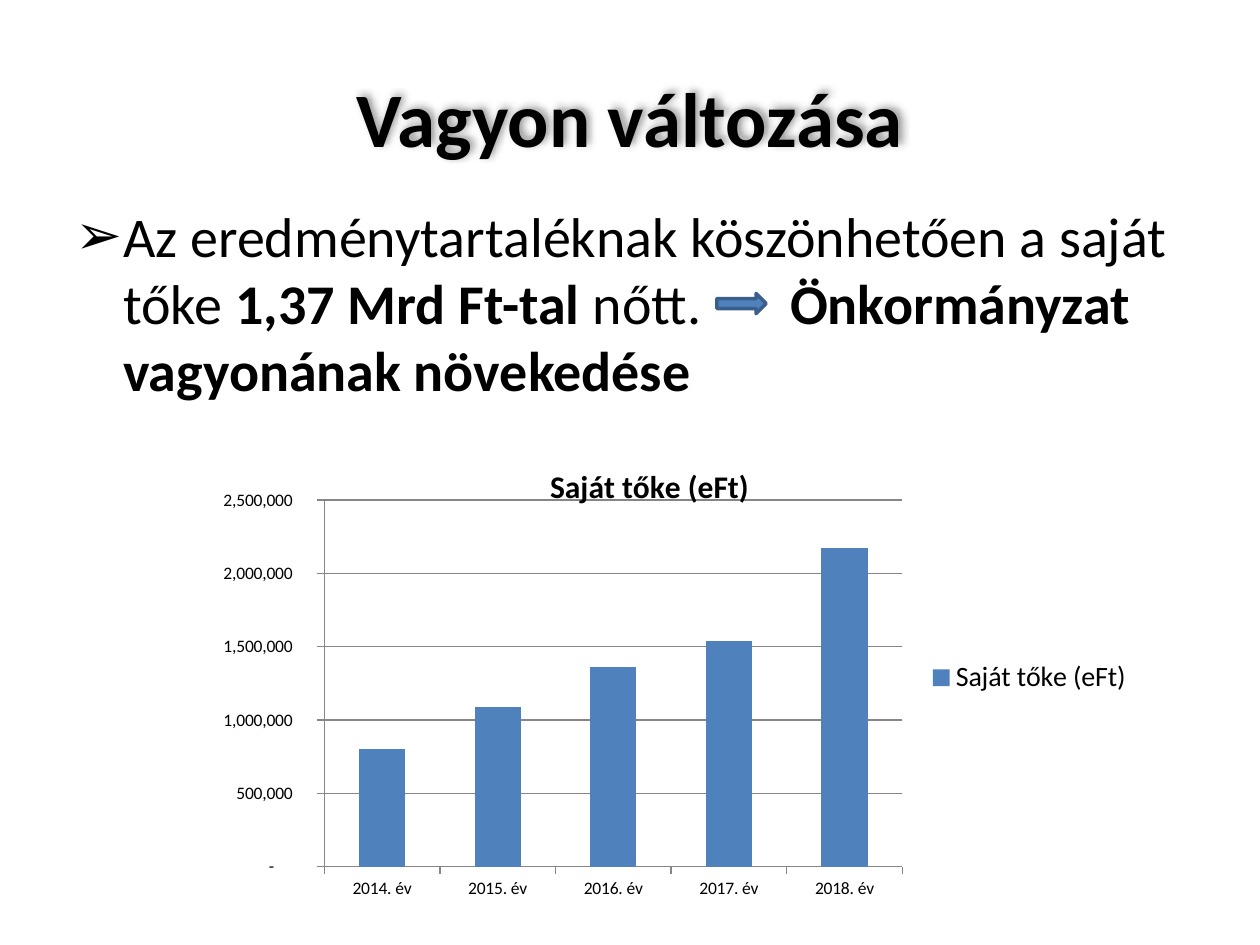
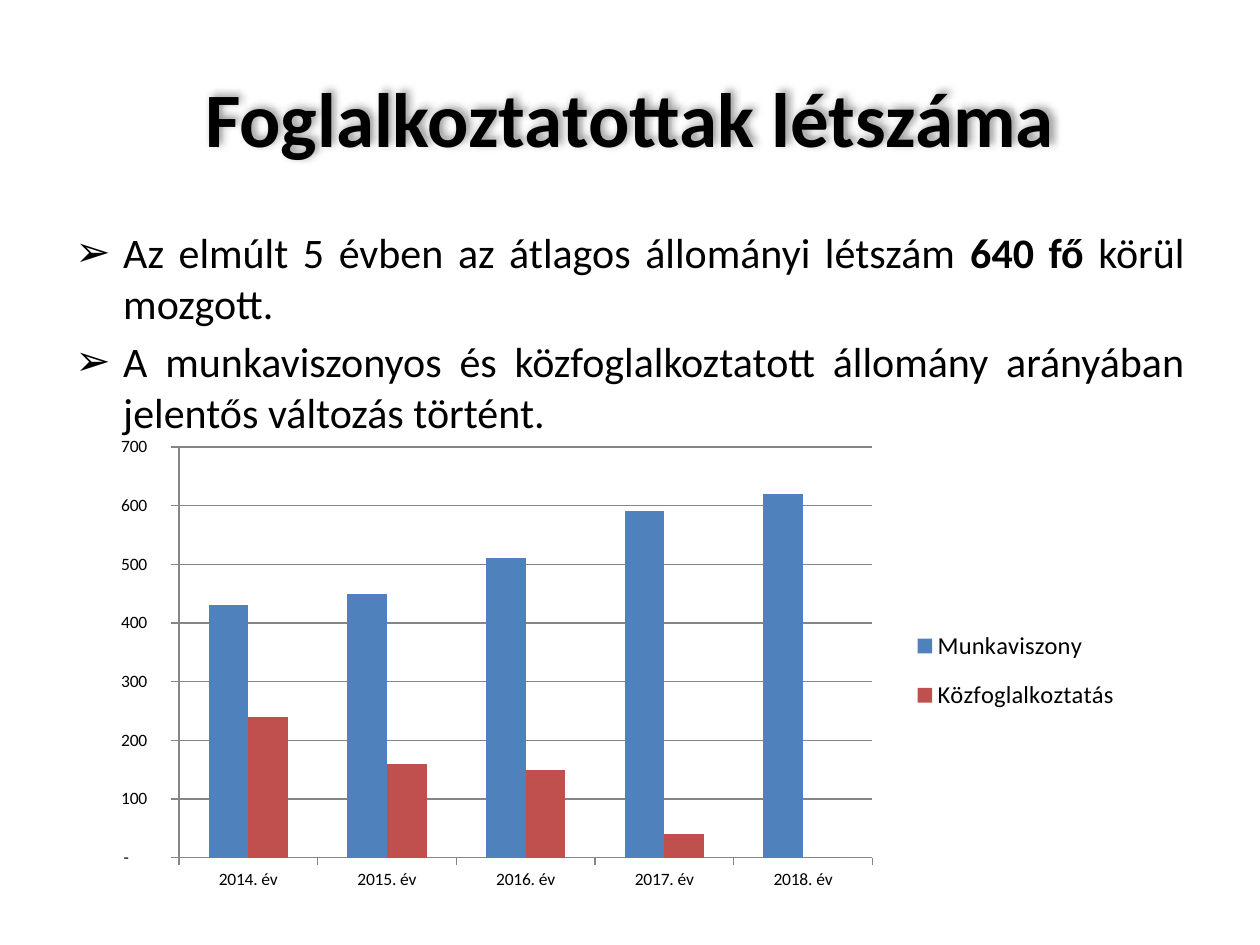
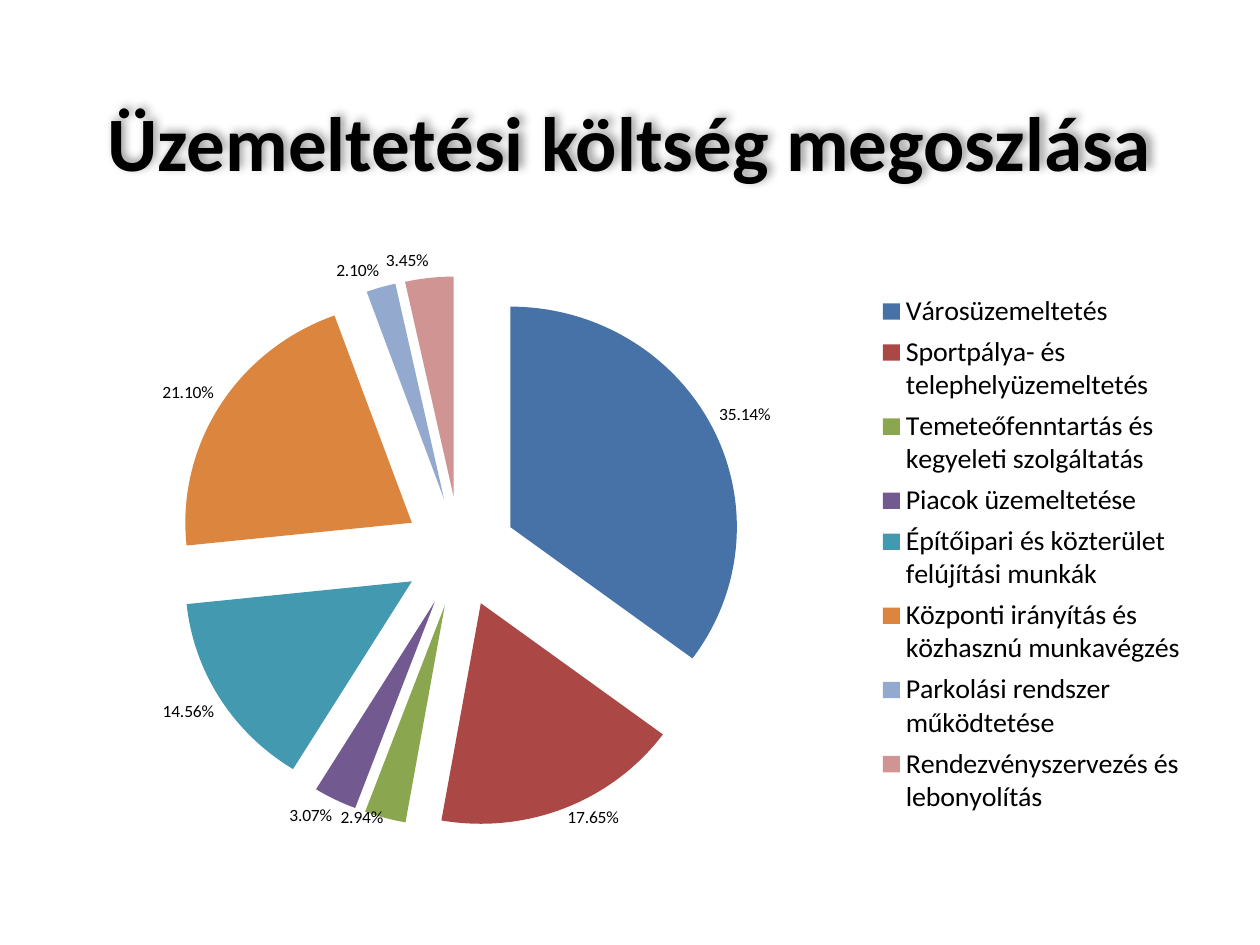
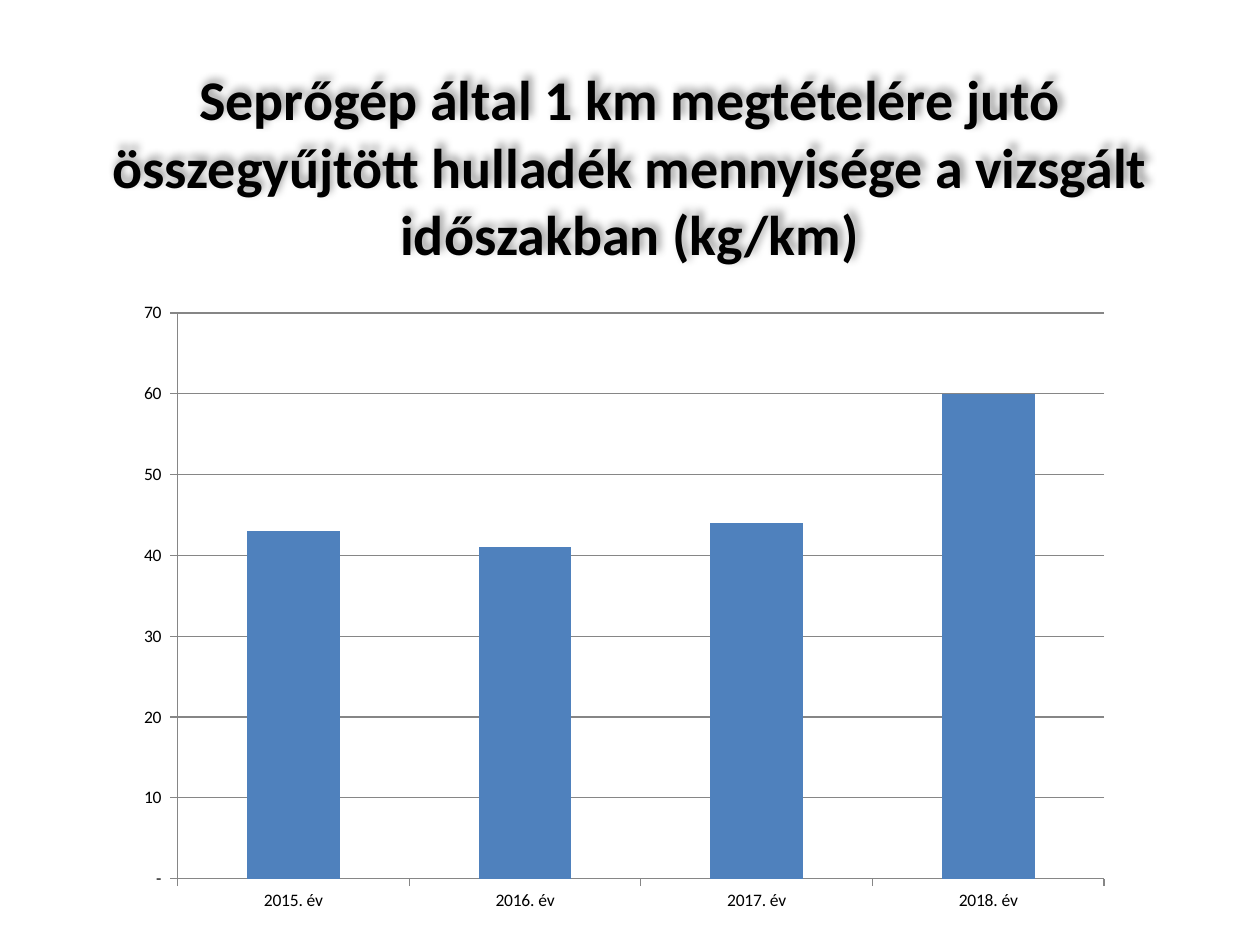
"""Build four slides on town assets, staff, running costs and street sweeping."""
from dataclasses import dataclass
from typing import Optional

from lxml import etree
from pptx import Presentation
from pptx import util as u
from pptx.chart.data import CategoryChartData
from pptx.dml.color import RGBColor
from pptx.enum import chart as kinds, shapes, text
from pptx.oxml import ns

PX = 9144
FONT, BLACK, GREY = "Calibri", "000000", "868686"
BLUE, RED, EDGE = "4F81BD", "C0504D", "3A5F8C"
SLICES = ("4672A8", "AB4744", "8AA64F", "725990", "4299B0", "DC853E", "93A9CE", "D09493")
FORINT = r'_-* #,##0\ _F_t_-;\-* #,##0\ _F_t_-;_-* "-"??\ _F_t_-;_-@_-'
COUNT = r'_(* #,##0_);_(* \(#,##0\);_(* "-"_);_(@_)'
YEARS = [f"{year}. év" for year in range(2014, 2019)]


@dataclass
class Box:
    """A frame in px."""
    left: int
    top: int
    width: int
    height: int

    def emu(self) -> list:
        """Give the frame in EMU."""
        return [u.Emu(n * PX) for n in (self.left, self.top, self.width, self.height)]


@dataclass
class Run:
    """A piece of text; gap widens its letters, in points."""
    words: str
    bold: bool = False
    gap: float = 0


@dataclass
class Graph:
    """What a chart shows and how it is laid out."""
    box: Box
    cats: list
    rows: dict
    plot: tuple
    form: str
    top: float = 0
    step: float = 0
    title: str = ""
    key: int = 0
    place: Optional[tuple] = None


def tint(code: str) -> RGBColor:
    """Turn a hex string into a colour."""
    return RGBColor.from_string(code)


def add(parent, tag: str, **attrs):
    """Append an XML element with the given attributes."""
    return etree.SubElement(parent, ns.qn(tag), {k: str(v) for k, v in attrs.items()})


def style(font, size: float, bold: bool = False) -> None:
    """Give a font the shared face and colour."""
    font.name, font.size, font.bold = FONT, u.Pt(size), bold
    font.color.rgb = tint(BLACK)


def write(slide, box: Box, paras: list, size: float, align=None,
          middle: bool = False, mark: str = ""):
    """Add a text box of paragraphs, each a list of runs."""
    shape = slide.shapes.add_textbox(*box.emu())
    frame = shape.text_frame
    frame.word_wrap = True
    frame.vertical_anchor = text.MSO_ANCHOR.MIDDLE if middle else text.MSO_ANCHOR.TOP
    for i, runs in enumerate(paras):
        para = frame.add_paragraph() if i else frame.paragraphs[0]
        para.alignment = align
        if i:
            para.space_before = u.Pt(size * 0.2)
        if mark:
            props = para._p.get_or_add_pPr()
            props.set("marL", str(38 * PX))
            props.set("indent", str(-38 * PX))
            add(props, "a:buFont", typeface=FONT)
            add(props, "a:buChar", char=mark)
        for part in runs:
            run = para.add_run()
            run.text = part.words
            style(run.font, size, part.bold)
            if part.gap:
                run._r.get_or_add_rPr().set("spc", str(int(part.gap * 100)))
    return shape


def head(slide, words: str, height: int = 125, size: float = 44) -> None:
    """Add the bold title with its soft shadow."""
    shape = write(slide, Box(50, 30, 900, height), [[Run(words, True)]], size,
                  text.PP_ALIGN.CENTER, middle=True)
    glow = add(add(shape._element.spPr, "a:effectLst"), "a:outerShdw", blurRad=63500,
               dist=38100, dir=17400000, algn="bl", rotWithShape=0)
    add(add(glow, "a:prstClr", val="black"), "a:alpha", val=40000)


def place(owner, spots: tuple, inner: bool = False) -> None:
    """Fix a chart part at fractions x, y and maybe w, h of its chart."""
    for old in owner.findall(ns.qn("c:layout")):
        owner.remove(old)
    layout = etree.Element(ns.qn("c:layout"))
    manual = add(layout, "c:manualLayout")
    if inner:
        add(manual, "c:layoutTarget", val="inner")
    for name in ("xMode", "yMode"):
        add(manual, f"c:{name}", val="edge")
    for name, spot in zip("xywh", spots):
        add(manual, f"c:{name}", val=spot)
    prior = [el for el in owner if el.tag in (ns.qn("c:legendPos"), ns.qn("c:tx"))]
    owner.insert(owner.index(prior[-1]) + 1 if prior else 0, layout)


def draw(slide, graph: Graph, kind):
    """Add a chart with the shared font, plot frame, title and legend."""
    data = CategoryChartData()
    data.categories = graph.cats
    for name, vals in graph.rows.items():
        data.add_series(name, vals)
    chart = slide.shapes.add_chart(kind, *graph.box.emu(), data).chart
    style(chart.font, 10)
    chart.has_title = bool(graph.title)
    if graph.title:
        frame = chart.chart_title.text_frame
        frame.text = graph.title
        style(frame.paragraphs[0].runs[0].font, 18, True)
        place(chart.chart_title._element, (0.394, 0.035))
    chart.has_legend = bool(graph.key)
    if graph.key:
        chart.legend.position = kinds.XL_LEGEND_POSITION.RIGHT
        chart.legend.include_in_layout = False
        style(chart.legend.font, graph.key)
        if graph.place:
            place(chart.legend._element, graph.place)
    place(chart._chartSpace.chart.plotArea, graph.plot, inner=True)
    return chart


def bars(slide, graph: Graph) -> None:
    """Add a column chart with grey axes and grid."""
    chart = draw(slide, graph, kinds.XL_CHART_TYPE.COLUMN_CLUSTERED)
    plot, scale = chart.plots[0], chart.value_axis
    plot.gap_width, plot.overlap, plot.vary_by_categories = 150, 0, False
    for row, code in zip(plot.series, (BLUE, RED)):
        row.format.fill.solid()
        row.format.fill.fore_color.rgb = tint(code)
    scale.minimum_scale, scale.maximum_scale, scale.major_unit = 0, graph.top, graph.step
    scale.tick_labels.number_format = graph.form
    scale.tick_labels.number_format_is_linked = False
    scale.has_major_gridlines = True
    for axis in (chart.category_axis, scale):
        axis.major_tick_mark = kinds.XL_TICK_MARK.OUTSIDE
        style(axis.tick_labels.font, 10)
    for part in (chart.category_axis, scale, scale.major_gridlines):
        part.format.line.color.rgb = tint(GREY)
        part.format.line.width = u.Pt(0.75)


def pie(slide, graph: Graph) -> None:
    """Add a burst pie with its values outside."""
    chart = draw(slide, graph, kinds.XL_CHART_TYPE.PIE)
    plot = chart.plots[0]
    plot.vary_by_categories = True
    row = plot.series[0]
    burst = etree.Element(ns.qn("c:explosion"), val="25")
    row._element.find(ns.qn("c:cat")).addprevious(burst)
    for i, code in enumerate(SLICES):
        fill = row.points[i].format.fill
        fill.solid()
        fill.fore_color.rgb = tint(code)
    plot.has_data_labels = True
    tags = plot.data_labels
    tags.show_value, tags.show_percentage = True, False
    tags.number_format, tags.number_format_is_linked = graph.form, False
    tags.position = kinds.XL_LABEL_POSITION.OUTSIDE_END
    style(tags.font, 10)


def arrow(slide, box: Box) -> None:
    """Add the blue block arrow."""
    shape = slide.shapes.add_shape(shapes.MSO_SHAPE.RIGHT_ARROW, *box.emu())
    shape.shadow.inherit = False
    shape.fill.solid()
    shape.fill.fore_color.rgb = tint(BLUE)
    shape.line.color.rgb = tint(EDGE)
    shape.line.width = u.Pt(2)


def wealth(slide) -> None:
    """Fill the slide on assets."""
    head(slide, "Vagyon változása")
    write(slide, Box(50, 155, 900, 515), [[
        Run("Az eredménytartaléknak köszönhetően a saját tőke "),
        Run("1,37 Mrd Ft-tal ", True), Run("nőtt."), Run(" ", gap=43.4),
        Run("Önkormányzat vagyonának növekedése", True)]], 32, mark="➢")
    arrow(slide, Box(569, 233, 39, 16))
    name = "Saját tőke (eFt)"
    bars(slide, Graph(
        Box(122, 351, 787, 374), YEARS,
        {name: (800000, 1090000, 1360000, 1540000, 2170000)},
        (0.172, 0.123, 0.583, 0.778), FORINT, 2500000, 500000, title=name, key=16))


def staff(slide) -> None:
    """Fill the slide on head count."""
    head(slide, "Foglalkoztatottak létszáma")
    write(slide, Box(50, 175, 900, 495), [
        [Run("Az elmúlt 5 évben az átlagos állományi létszám "), Run("640 fő ", True),
         Run("körül mozgott.")],
        [Run("A munkaviszonyos és közfoglalkoztatott állomány arányában "
             "jelentős változás történt.")]],
        24, text.PP_ALIGN.JUSTIFY, mark="➢")
    bars(slide, Graph(
        Box(83, 344, 843, 362), YEARS,
        {"Munkaviszony": (430, 450, 510, 590, 620),
         "Közfoglalkoztatás": (240, 160, 150, 40, 0)},
        (0.07, 0.03, 0.653, 0.907), FORINT, 700, 100, key=14,
        place=(0.758, 0.394, 0.2, 0.26)))


def costs(slide) -> None:
    """Fill the slide on running costs."""
    head(slide, "Üzemeltetési költség megoszlása", 164)
    parts = {
        "Városüzemeltetés": 0.3514,
        "Sportpálya- és telephelyüzemeltetés": 0.1765,
        "Temeteőfenntartás és kegyeleti szolgáltatás": 0.0294,
        "Piacok üzemeltetése": 0.0307,
        "Építőipari és közterület felújítási munkák": 0.1456,
        "Központi irányítás és közhasznú munkavégzés": 0.211,
        "Parkolási rendszer működtetése": 0.021,
        "Rendezvényszervezés és lebonyolítás": 0.0345,
    }
    pie(slide, Graph(
        Box(50, 175, 900, 495), list(parts), {"Series 1": list(parts.values())},
        (0.016, 0.092, 0.668, 0.908), "0.00%", key=16, place=(0.714, 0.11, 0.28, 0.88)))


def sweep(slide) -> None:
    """Fill the slide on swept waste."""
    head(slide, "Seprőgép által 1 km megtételére jutó összegyűjtött hulladék "
                "mennyisége a vizsgált időszakban (kg/km)", 203, 32)
    bars(slide, Graph(
        Box(51, 218, 900, 515), YEARS[1:], {"Series 1": (43, 41, 44, 60)},
        (0.1, 0.059, 0.817, 0.872), COUNT, 70, 10))


def main() -> None:
    """Build and save the deck."""
    deck = Presentation()
    deck.slide_width, deck.slide_height = u.Emu(1000 * PX), u.Emu(750 * PX)
    for fill in (wealth, staff, costs, sweep):
        fill(deck.slides.add_slide(deck.slide_layouts[6]))
    deck.save("out.pptx")


if __name__ == "__main__":
    main()
